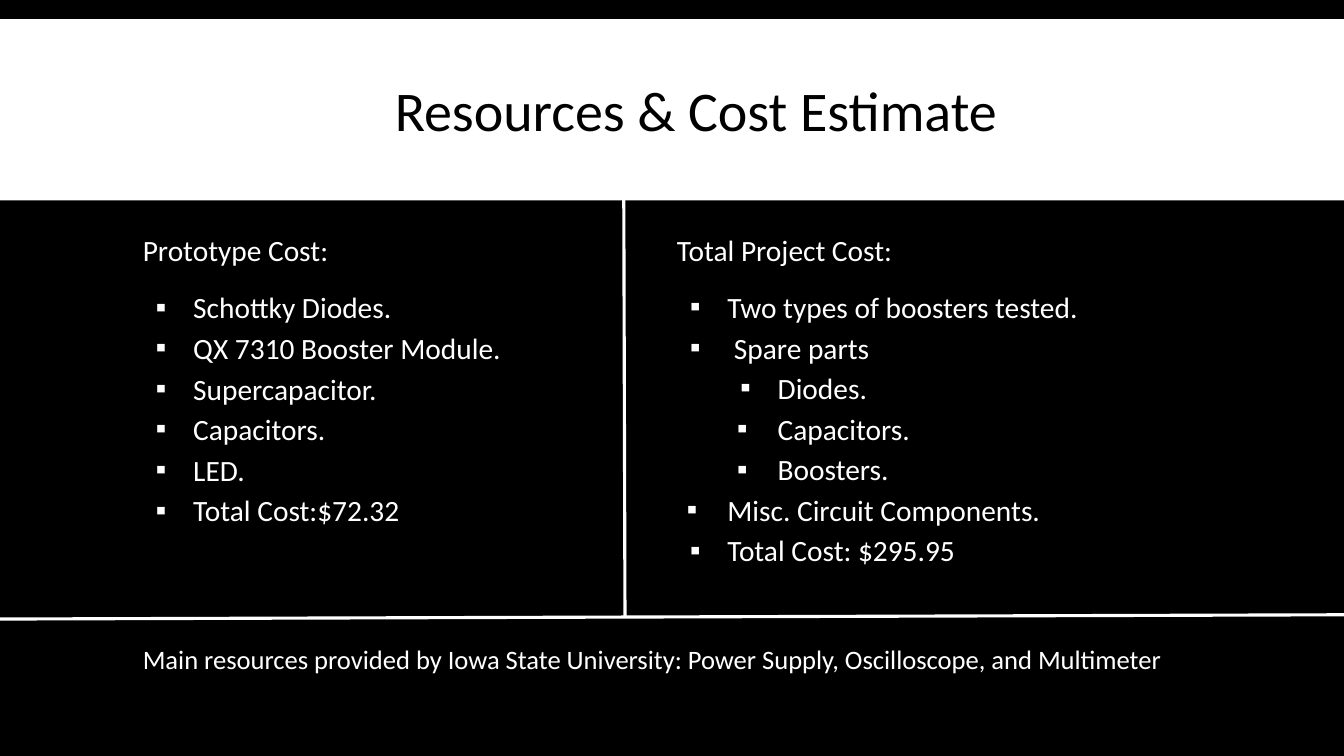
from lxml import etree
from pptx import Presentation
from pptx.dml.color import RGBColor
from pptx.enum import shapes, text
from pptx.oxml import ns
from pptx.util import Cm, Pt

BLACK, WHITE = "000000", "FFFFFF"
FONT = "Calibri"
LEFT_MARGIN = 3.35
HANG, WIDE_HANG = -0.94, -1.02
PROTOTYPE_ITEMS = [
    (item, 0, HANG)
    for item in (
        "Schottky Diodes.",
        "QX 7310 Booster Module.",
        "Supercapacitor.",
        "Capacitors.",
        "LED.",
        "Total Cost:$72.32",
    )
]
PROJECT_ITEMS = [
    ("Two types of boosters tested.", 0, HANG),
    (" Spare parts", 0, HANG),
    ("Diodes.", 1, HANG),
    ("Capacitors.", 1, WIDE_HANG),
    ("Boosters.", 1, WIDE_HANG),
    ("Misc. Circuit Components.", 0, WIDE_HANG),
    ("Total Cost: $295.95", 0, HANG),
]


def set_color(color_format, color):
    """Apply a hex colour to a colour format."""
    color_format.rgb = RGBColor.from_string(color)


def set_indent(paragraph, margin, first_line):
    """Set the left margin and first-line indent in centimetres."""
    properties = paragraph._p.get_or_add_pPr()
    properties.set("marL", str(Cm(margin)))
    properties.set("indent", str(Cm(first_line)))


def add_bullet(paragraph, color):
    """Give a paragraph a small square bullet."""
    properties = paragraph._p.get_or_add_pPr()
    bullet_color = etree.SubElement(properties, ns.qn("a:buClr"))
    etree.SubElement(bullet_color, ns.qn("a:srgbClr"), val=color)
    etree.SubElement(properties, ns.qn("a:buFont"), typeface=FONT)
    etree.SubElement(properties, ns.qn("a:buChar"), char="▪")


def write(paragraph, content, size, color, line_spacing):
    """Put formatted text into a paragraph."""
    paragraph.text = content
    paragraph.line_spacing = line_spacing
    for run in paragraph.runs:
        run.font.name = FONT
        run.font.size = Pt(size)
        set_color(run.font.color, color)


def add_text_box(slide, left, top, width, height, inset):
    """Add a wrapping text box and return its text frame."""
    shape = slide.shapes.add_textbox(Cm(left), Cm(top), Cm(width), Cm(height))
    text_frame = shape.text_frame
    text_frame.word_wrap = True
    text_frame.margin_top = text_frame.margin_bottom = Cm(inset)
    return text_frame


def add_title_band(slide, width):
    """Add the white band with the slide title."""
    band = slide.shapes.add_shape(
        shapes.MSO_SHAPE.RECTANGLE, 0, Cm(0.48), width, Cm(4.57)
    )
    band.shadow.inherit = False
    band.fill.solid()
    set_color(band.fill.fore_color, WHITE)
    band.line.fill.background()
    text_frame = add_text_box(slide, LEFT_MARGIN, 0.79, 27.18, 4.19, 0.13)
    text_frame.vertical_anchor = text.MSO_ANCHOR.MIDDLE
    title = text_frame.paragraphs[0]
    write(title, "Resources & Cost Estimate", 40, BLACK, 0.85)
    set_indent(title, 5.08, 1.27)


def add_cost_list(text_frame, heading, items):
    """Fill a text frame with a heading and bulleted cost items."""
    write(text_frame.paragraphs[0], heading, 21, WHITE, 1.15)
    for index, (item, level, hang) in enumerate(items):
        paragraph = text_frame.add_paragraph()
        write(paragraph, item, 21, WHITE, 1.15)
        paragraph.level = level
        paragraph.space_before = Pt(0 if index else 12)
        set_indent(paragraph, 1.27 * (level + 1), hang)
        add_bullet(paragraph, WHITE)


def add_divider(slide, *ends):
    """Draw a white dividing line between two points."""
    connector = slide.shapes.add_connector(
        shapes.MSO_CONNECTOR.STRAIGHT, *(Cm(end) for end in ends)
    )
    set_color(connector.line.color, WHITE)
    connector.line.width = Pt(2.25)
    etree.SubElement(connector._element.spPr, ns.qn("a:effectLst"))


def main():
    """Build the resources and cost slide."""
    presentation = Presentation()
    presentation.slide_width = Cm(33.87)
    presentation.slide_height = Cm(19.05)
    slide = presentation.slides.add_slide(presentation.slide_layouts[6])
    slide.background.fill.solid()
    set_color(slide.background.fill.fore_color, BLACK)

    add_title_band(slide, presentation.slide_width)
    prototype = add_text_box(slide, LEFT_MARGIN, 5.59, 10.52, 9.04, 0.13)
    add_cost_list(prototype, "Prototype Cost:", PROTOTYPE_ITEMS)
    project = add_text_box(slide, 16.81, 5.46, 12.73, 8.1, 0.25)
    add_cost_list(project, "Total Project Cost:", PROJECT_ITEMS)

    footer = add_text_box(slide, LEFT_MARGIN, 16.03, 28.12, 3, 0.25)
    write(
        footer.paragraphs[0],
        "Main resources provided by Iowa State University: "
        "Power Supply, Oscilloscope, and Multimeter",
        19, WHITE, 0.9,
    )
    add_divider(slide, -0.3, 15.6, 34.19, 15.49)
    add_divider(slide, 15.72, 4.98, 15.75, 15.52)
    presentation.save("out.pptx")


if __name__ == "__main__":
    main()
